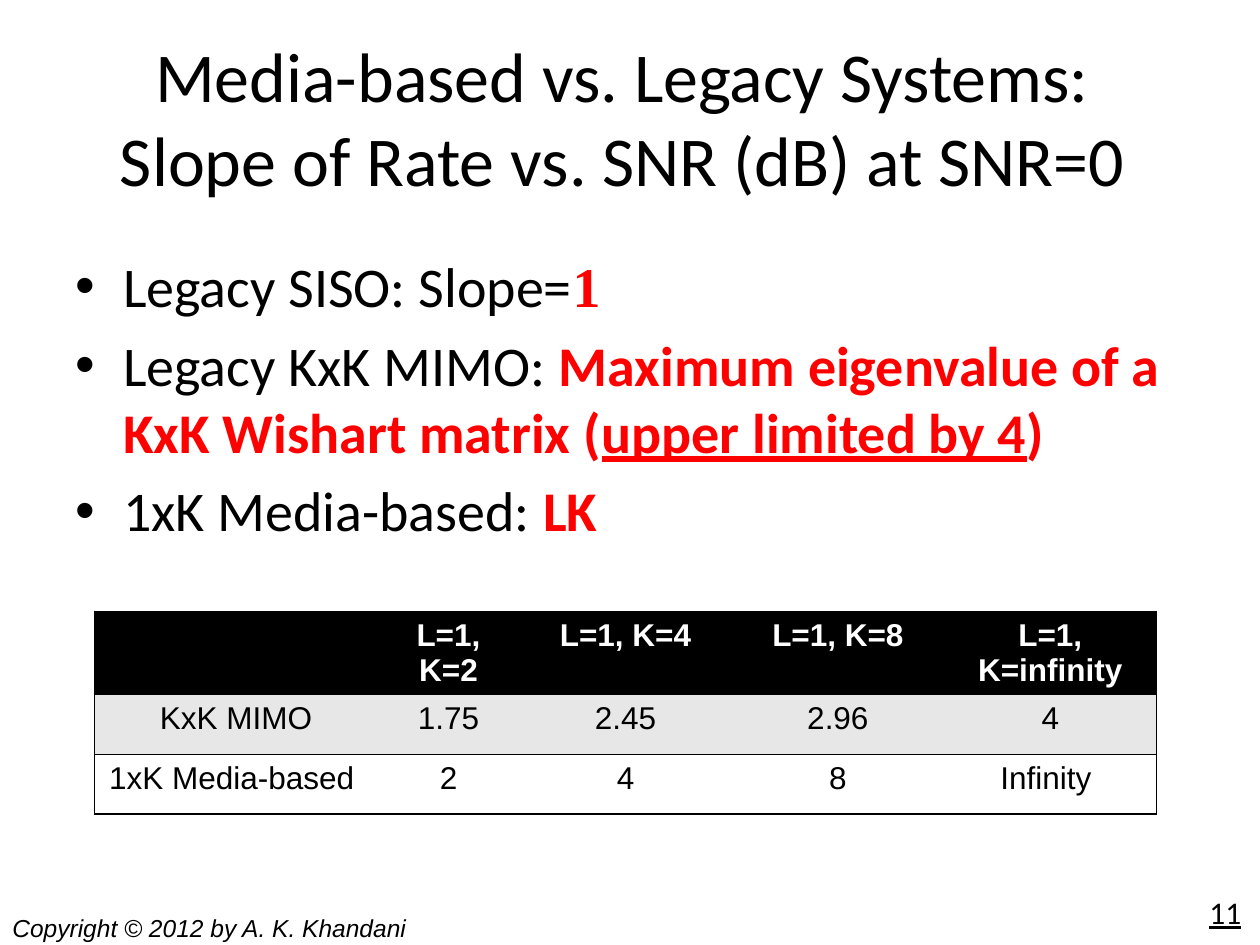
from dataclasses import dataclass

from lxml.etree import SubElement
from pptx import Presentation
from pptx.dml.color import RGBColor
from pptx.enum.text import MSO_ANCHOR, PP_ALIGN
from pptx.oxml.ns import qn
from pptx.util import Inches, Pt

WIDTH, HEIGHT = 10, 7.5
BLACK, WHITE, RED, GREY = "000000", "FFFFFF", "FF0000", "E7E7E7"


@dataclass(frozen=True)
class Style:
    """Character formatting of a run."""
    size: float
    font: str = "Calibri"
    color: str = BLACK
    bold: bool = False
    italic: bool = False
    underline: bool = False


@dataclass(frozen=True)
class Box:
    """Position and size as shares of the slide."""
    left: float
    top: float
    width: float
    height: float

    def lengths(self) -> tuple:
        """Return left, top, width and height as lengths."""
        return (Inches(self.left * WIDTH), Inches(self.top * HEIGHT),
                Inches(self.width * WIDTH), Inches(self.height * HEIGHT))


@dataclass(frozen=True)
class TableRow:
    """Texts of a table row with its fill and text style."""
    texts: tuple
    fill: str
    style: Style


BODY = Style(32)
KEY = Style(32, color=RED, bold=True)
BULLETS = (
    (("Legacy SISO: Slope=", BODY),
     ("1", Style(32, "Times New Roman", RED, bold=True))),
    (("Legacy KxK MIMO: ", BODY),
     ("Maximum eigenvalue of a KxK Wishart matrix (", KEY),
     ("upper limited by 4", Style(32, color=RED, bold=True, underline=True)),
     (")", KEY)),
    (("1xK Media-based: ", BODY), ("LK", KEY)),
)
HEADING = Style(18, "Arial", WHITE, bold=True)
CELL = Style(18, "Arial")
ROWS = (
    TableRow(("", "L=1, K=2", "L=1, K=4", "L=1, K=8", "L=1, K=infinity"), BLACK, HEADING),
    TableRow(("KxK MIMO", "1.75", "2.45", "2.96", "4"), GREY, CELL),
    TableRow(("1xK Media-based ", "2", "4", "8", "Infinity "), WHITE, CELL),
)
COLUMN_SHARES = (4, 2, 3, 3, 3)


def rgb(color: str) -> RGBColor:
    """Turn a hex string into a colour."""
    return RGBColor.from_string(color)


def format_run(run, style: Style) -> None:
    """Apply a style to a run."""
    font = run.font
    font.size, font.name = Pt(style.size), style.font
    font.bold, font.italic, font.underline = style.bold, style.italic, style.underline
    font.color.rgb = rgb(style.color)


def format_paragraph(paragraph, style: Style, alignment=PP_ALIGN.LEFT) -> None:
    """Align a paragraph and style all its runs."""
    paragraph.alignment = alignment
    for run in paragraph.runs:
        format_run(run, style)


def add_label(slide, box: Box, text: str, style: Style, alignment, anchor) -> None:
    """Add a one-line text box."""
    text_frame = slide.shapes.add_textbox(*box.lengths()).text_frame
    text_frame.text = text
    text_frame.word_wrap, text_frame.vertical_anchor = True, anchor
    format_paragraph(text_frame.paragraphs[0], style, alignment)


def set_title(slide, box: Box, text: str) -> None:
    """Move, fill and format the title placeholder."""
    title = slide.shapes.title
    title.left, title.top, title.width, title.height = box.lengths()
    title.text_frame.text = text
    title.text_frame.vertical_anchor = MSO_ANCHOR.MIDDLE
    format_paragraph(title.text_frame.paragraphs[0], Style(40), PP_ALIGN.CENTER)


def add_bullets(slide, box: Box) -> None:
    """Add the bulleted list with hanging indents."""
    text_frame = slide.shapes.add_textbox(*box.lengths()).text_frame
    text_frame.word_wrap = True
    for index, parts in enumerate(BULLETS):
        paragraph = text_frame.add_paragraph() if index else text_frame.paragraphs[0]
        paragraph.space_before = Pt(6.4)
        for text, style in parts:
            run = paragraph.add_run()
            run.text = text
            format_run(run, style)
        properties = paragraph._p.get_or_add_pPr()
        indent = Inches(0.38)
        properties.set("marL", str(indent))
        properties.set("indent", str(-indent))
        SubElement(properties, qn("a:buFont"), typeface="Arial")
        SubElement(properties, qn("a:buChar"), char="•")


def set_borders(cell, visible: dict) -> None:
    """Draw the visible sides of a cell and clear the others."""
    properties = cell._tc.get_or_add_tcPr()
    for side, shown in visible.items():
        line = SubElement(properties, qn(f"a:ln{side}"), w=str(Pt(1)))
        if shown:
            fill = SubElement(line, qn("a:solidFill"))
            SubElement(fill, qn("a:srgbClr"), val=BLACK)
        else:
            SubElement(line, qn("a:noFill"))


def add_slope_table(slide, box: Box) -> None:
    """Add the table of slopes."""
    last = len(COLUMN_SHARES) - 1
    table = slide.shapes.add_table(len(ROWS), last + 1, *box.lengths()).table
    table.first_row = table.horz_banding = False
    unit = box.width * WIDTH / sum(COLUMN_SHARES)
    for column, share in zip(table.columns, COLUMN_SHARES):
        column.width = Inches(share * unit)
    for row_index, row in enumerate(ROWS):
        for column_index, text in enumerate(row.texts):
            cell = table.cell(row_index, column_index)
            set_borders(cell, {"L": column_index == 0, "R": column_index == last,
                               "T": True, "B": True})
            cell.fill.solid()
            cell.fill.fore_color.rgb = rgb(row.fill)
            cell.margin_bottom = Inches(0.01)
            cell.text_frame.text = text
            format_paragraph(cell.text_frame.paragraphs[0], row.style, PP_ALIGN.CENTER)


def main() -> None:
    """Build and save the slide."""
    presentation = Presentation()
    presentation.slide_width, presentation.slide_height = Inches(WIDTH), Inches(HEIGHT)
    slide = presentation.slides.add_slide(presentation.slide_layouts[5])
    add_label(slide, Box(0, 0.96, 0.4, 0.04), "Copyright © 2012 by A. K. Khandani",
              Style(14, "Arial", italic=True), PP_ALIGN.LEFT, MSO_ANCHOR.TOP)
    set_title(slide, Box(0.05, 0.04, 0.9, 0.166),
              "Media-based vs. Legacy Systems: \vSlope of Rate vs. SNR (dB) at SNR=0 ")
    add_bullets(slide, Box(0.05, 0.26, 0.9, 0.66))
    add_label(slide, Box(0.94, 0.94, 0.055, 0.05), "11", Style(18, underline=True),
              PP_ALIGN.RIGHT, MSO_ANCHOR.MIDDLE)
    add_slope_table(slide, Box(0.075, 0.647, 0.843, 0.19))
    presentation.save("out.pptx")


if __name__ == "__main__":
    main()
